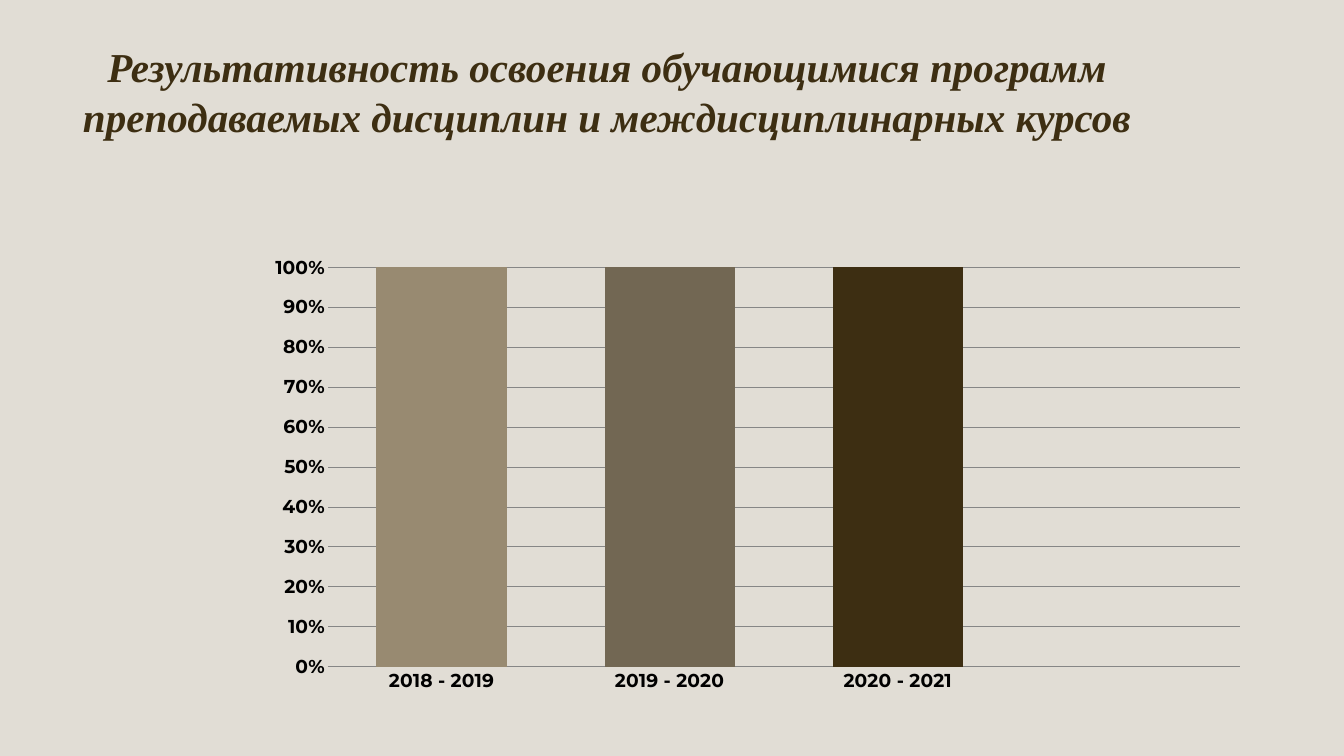
from lxml import etree
from pptx import Presentation
from pptx.chart.data import CategoryChartData
from pptx.dml.color import RGBColor
from pptx.enum.chart import XL_CHART_TYPE, XL_TICK_MARK
from pptx.enum.text import MSO_ANCHOR, MSO_AUTO_SIZE, PP_ALIGN
from pptx.oxml.ns import qn
from pptx.util import Inches, Pt

STACKED = XL_CHART_TYPE.COLUMN_STACKED_100
NO_TICK = XL_TICK_MARK.NONE
TOP = MSO_ANCHOR.TOP
GROW = MSO_AUTO_SIZE.SHAPE_TO_FIT_TEXT
CENTER = PP_ALIGN.CENTER

COLORS = {"background": "E1DDD5", "sand": "988A71", "taupe": "726753",
          "brown": "3D2E12", "text": "000000", "grid": "868686"}
TITLE_FONT, AXIS_FONT, CHART_FONT = "Times New Roman", "Montserrat", "Calibri"


def color(name):
    return RGBColor.from_string(COLORS[name])


class SlideBuilder:
    def __init__(self, deck):
        self.slide = deck.slides.add_slide(deck.slide_layouts[5])
        fill = self.slide.background.fill
        fill.solid()
        fill.fore_color.rgb = color("background")

    def style_font(self, font, name, size, color_name, bold=False, italic=False):
        font.name, font.size = name, Pt(size)
        font.bold, font.italic = bold, italic
        font.color.rgb = color(color_name)

    def title(self, text, left, top, width, height):
        box = self.slide.shapes.title
        box.left, box.top = Inches(left), Inches(top)
        box.width, box.height = Inches(width), Inches(height)
        frame = box.text_frame
        frame.margin_left = frame.margin_right = 0
        frame.margin_top = frame.margin_bottom = 0
        frame.word_wrap = True
        frame.vertical_anchor = TOP
        frame.auto_size = GROW
        para = frame.paragraphs[0]
        para.alignment = CENTER
        para.line_spacing = Pt(52.8)
        span = para.add_run()
        span.text = text
        self.style_font(span.font, TITLE_FONT, 44, "brown", True, True)

    def column_chart(self, categories, values, point_colors, left, top, width, height):
        data = CategoryChartData()
        data.categories = categories
        data.add_series("Series 1", values)
        chart = self.slide.shapes.add_chart(
            STACKED, Inches(left), Inches(top), Inches(width), Inches(height), data).chart
        chart.has_legend = chart.has_title = False
        self.style_font(chart.font, CHART_FONT, 18, "text")

        plot = chart.plots[0]
        plot.gap_width, plot.overlap = 75, 100
        plot.vary_by_categories = False
        for index, name in enumerate(point_colors):
            fill = plot.series[0].points[index].format.fill
            fill.solid()
            fill.fore_color.rgb = color(name)

        for axis in (chart.category_axis, chart.value_axis):
            axis.major_tick_mark = axis.minor_tick_mark = NO_TICK
            self.style_font(axis.tick_labels.font, AXIS_FONT, 20, "text", bold=True)
        value_axis = chart.value_axis
        value_axis.minimum_scale, value_axis.maximum_scale = 0, 1
        value_axis.major_unit = 0.1
        value_axis.tick_labels.number_format = "0%"
        value_axis.tick_labels.number_format_is_linked = False
        value_axis.format.line.fill.background()
        for line in (value_axis.major_gridlines.format.line, chart.category_axis.format.line):
            line.width = Pt(0.75)
            line.color.rgb = color("grid")
        self.place_plot(plot, x=0.07, y=0.04, w=0.91, h=0.88)

    def place_plot(self, plot, **bounds):
        """Fix the inner plot area, in fractions of the chart."""
        area = plot._element.getparent()
        for old in area.findall(qn("c:layout")):
            area.remove(old)
        layout = etree.Element(qn("c:layout"))
        manual = etree.SubElement(layout, qn("c:manualLayout"))
        settings = {"layoutTarget": "inner", "xMode": "edge", "yMode": "edge", **bounds}
        for tag, value in settings.items():
            etree.SubElement(manual, qn(f"c:{tag}")).set("val", str(value))
        area.insert(0, layout)


def main():
    deck = Presentation()
    deck.slide_width, deck.slide_height = Inches(20), Inches(11.25)
    page = SlideBuilder(deck)

    # Heading
    page.title("Результативность освоения обучающимися программ "
               "преподаваемых дисциплин и междисциплинарных курсов",
               0.75, 0.62, 16.58, 1.48)

    # Results by school year; the last slot is empty
    page.column_chart(["2018 - 2019", "2019 - 2020", "2020 - 2021", ""],
                      [100, 100, 100, None], ["sand", "taupe", "brown"],
                      3.83, 3.71, 14.92, 6.75)
    deck.save("out.pptx")


if __name__ == "__main__":
    main()
